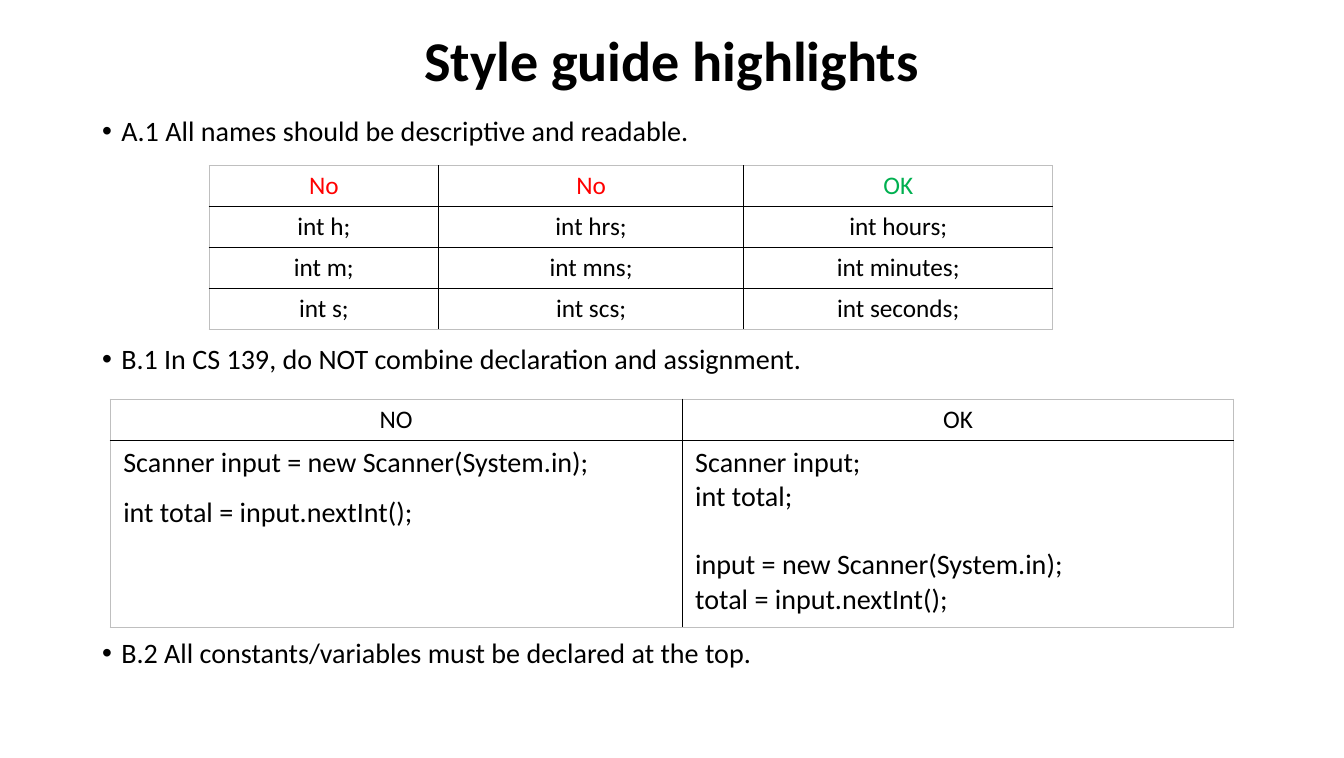
from collections import namedtuple

from lxml.etree import SubElement
from pptx import Presentation
from pptx.dml.color import RGBColor
from pptx.enum.text import MSO_ANCHOR, MSO_AUTO_SIZE, PP_ALIGN
from pptx.oxml.ns import qn
from pptx.util import Pt

PX = 9144  # 100 px to the inch

Theme = namedtuple("Theme", "font ink bad good edge title body cell")
theme = Theme(font="Calibri", ink="000000", bad="FF0000", good="00B050",
              edge="BFBFBF", title=40, body=20, cell=18)


def write(frame, lines, size=theme.body, color=theme.ink, bold=False,
          align=PP_ALIGN.LEFT, spacing=1.0, hanging=0):
    """Fill a text frame with (text, points before) lines."""
    for i, (text, before) in enumerate(lines):
        paragraph = frame.paragraphs[0] if i == 0 else frame.add_paragraph()
        paragraph.alignment = align
        paragraph.line_spacing = spacing
        paragraph.space_before = Pt(before)
        if hanging:
            properties = paragraph._p.get_or_add_pPr()
            properties.set("marL", str(hanging * PX))
            properties.set("indent", str(-hanging * PX))
        run = paragraph.add_run()
        run.text = text
        run.font.name = theme.font
        run.font.size = Pt(size)
        run.font.bold = bold
        run.font.color.rgb = RGBColor.from_string(color)


def add_grid(left, top, widths, heights, rows):
    """Add a table of (lines, format) cells: black inside, pale outside."""
    grid = slide.shapes.add_table(
        len(heights), len(widths), left * PX, top * PX,
        sum(widths) * PX, sum(heights) * PX).table
    grid.first_row = grid.horz_banding = False
    for column, width in zip(grid.columns, widths):
        column.width = width * PX
    for r, (height, row) in enumerate(zip(heights, rows)):
        grid.rows[r].height = height * PX
        for c, (lines, style) in enumerate(row):
            cell = grid.cell(r, c)
            cell.margin_left = cell.margin_right = 13 * PX
            cell.margin_top = cell.margin_bottom = 5 * PX
            write(cell.text_frame, lines, **style)
            outer = {"lnL": c == 0, "lnR": c == len(widths) - 1,
                     "lnT": r == 0, "lnB": r == len(heights) - 1}
            for side, is_outer in outer.items():
                border = SubElement(cell._tc.get_or_add_tcPr(),
                                    qn(f"a:{side}"), w=str(Pt(1)))
                fill = SubElement(border, qn("a:solidFill"))
                SubElement(fill, qn("a:srgbClr"),
                           val=theme.edge if is_outer else theme.ink)
            cell.fill.background()


deck = Presentation()
deck.slide_width, deck.slide_height = 1330 * PX, 750 * PX
slide = deck.slides.add_slide(deck.slide_layouts[1])

title, rules = slide.placeholders
for part, top, height, anchor in ((title, 14, 98, MSO_ANCHOR.MIDDLE),
                                  (rules, 111, 587, MSO_ANCHOR.TOP)):
    part.left, part.top = 91 * PX, top * PX
    part.width, part.height = 1147 * PX, height * PX
    part.text_frame.vertical_anchor = anchor
    part.text_frame.auto_size = MSO_AUTO_SIZE.NONE

write(title.text_frame, [("Style guide highlights", 0)], size=theme.title,
      bold=True, align=PP_ALIGN.CENTER, spacing=0.9)
write(rules.text_frame, [
    ("A.1 All names should be descriptive and readable.", 7.5),
    ("B.1 In CS 139, do NOT combine declaration and assignment.", 141),
    ("B.2 All constants/variables must be declared at the top.", 188),
], spacing=0.9, hanging=19)

centred = {"size": theme.cell, "align": PP_ALIGN.CENTER}
verdicts = [("No", theme.bad), ("No", theme.bad), ("OK", theme.good)]
names = [("h", "hrs", "hours"), ("m", "mns", "minutes"),
         ("s", "scs", "seconds")]
naming = [[([(verdict, 0)], {**centred, "color": color})
           for verdict, color in verdicts]]
naming += [[([(f"int {name};", 0)], centred) for name in row] for row in names]
add_grid(207, 164, [227, 302, 306], [40] * 4, naming)

combined = [("Scanner input = new Scanner(System.in);", 0),
            ("int total = input.nextInt();", 11)]
separate = [("Scanner input;", 0), ("int total;", 0),
            ("input = new Scanner(System.in);", 24),
            ("total = input.nextInt();", 0)]
add_grid(109, 395, [566, 546], [41, 185], [
    [([("NO", 0)], centred), ([("OK", 0)], centred)],
    [(combined, {}), (separate, {})],
])

deck.save("out.pptx")
